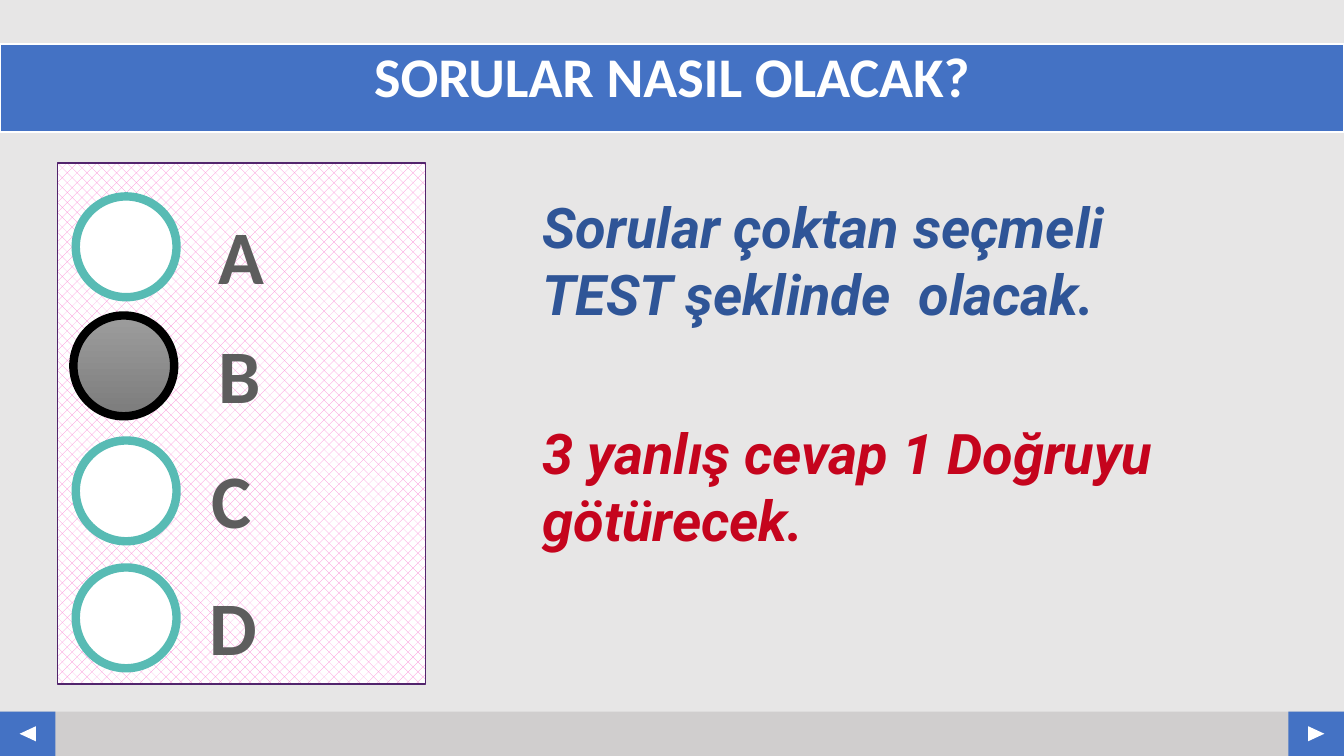
from pptx import Presentation
from pptx.dml.color import RGBColor
from pptx.enum.dml import MSO_PATTERN
from pptx.enum.shapes import MSO_SHAPE
from pptx.enum.text import MSO_ANCHOR, PP_ALIGN
from pptx.util import Cm, Pt

RECT, OVAL, TRIANGLE = MSO_SHAPE.RECTANGLE, MSO_SHAPE.OVAL, MSO_SHAPE.ISOSCELES_TRIANGLE
TOP, MIDDLE = MSO_ANCHOR.TOP, MSO_ANCHOR.MIDDLE
LEFT, CENTER = PP_ALIGN.LEFT, PP_ALIGN.CENTER

COLORS = {
    "background": "E7E6E6", "footer": "D0CECE", "blue": "4472C4", "white": "FFFFFF",
    "pink": "FB85D4", "purple": "52256D", "teal": "58BBB4", "black": "000000",
    "marked_top": "9D9D9D", "marked_bottom": "7C7C7C", "letter": "5D5D5D",
    "statement": "2F5597", "warning": "C5041D",
}
SLIDE_W, SLIDE_H = 33.87, 19.05
CIRCLE = 2.54

# letter, circle left, circle top, letter centre; measured from the answer panel
ANSWERS = [
    ("A", 0.46, 0.84, 4.63),
    ("B", 0.4, 3.84, 4.58),
    ("C", 0.46, 6.99, 4.38),
    ("D", 0.46, 10.19, 4.44),
]
MARKED = "B"


def rgb(name):
    return RGBColor.from_string(COLORS[name])


def add_figure(slide, kind, box, fill=None, line=None, line_width=1):
    figure = slide.shapes.add_shape(kind, *(Cm(length) for length in box))
    figure.shadow.inherit = False
    if fill:
        figure.fill.solid()
        figure.fill.fore_color.rgb = rgb(fill)
    if line:
        figure.line.color.rgb = rgb(line)
        figure.line.width = Pt(line_width)
    else:
        figure.line.fill.background()
    return figure


def write(figure, text, font_name, size, color, align=LEFT, anchor=TOP, italic=False):
    frame = figure.text_frame
    frame.word_wrap = True
    frame.vertical_anchor = anchor
    paragraph = frame.paragraphs[0]
    paragraph.text = text
    paragraph.alignment = align
    font = paragraph.font
    font.name, font.size, font.bold, font.italic = font_name, Pt(size), True, italic
    font.color.rgb = rgb(color)
    return frame


def add_text(slide, box, *args, **options):
    return write(slide.shapes.add_textbox(*(Cm(length) for length in box)), *args, **options)


def add_footer(slide, left, top, width, height):
    """Grey strip with a navigation button at each end."""
    button_w, arrow_w, arrow_h = 1.4, 0.38, 0.41
    add_figure(slide, RECT, (left, top, width, height), "footer")
    for button_left, rotation in ((left, 270), (left + width - button_w, 90)):
        add_figure(slide, RECT, (button_left, top, button_w, height), "blue")
        arrow = add_figure(slide, TRIANGLE, (button_left + (button_w - arrow_w) / 2,
                                             top + (height - arrow_h) / 2,
                                             arrow_w, arrow_h), "white")
        arrow.rotation = rotation


def add_title(slide, *box):
    bar = add_figure(slide, RECT, box, "blue", "white", 1.5)
    write(bar, "SORULAR NASIL OLACAK?", "Calibri", 40, "white", CENTER)
    bar.text_frame.paragraphs[0].line_spacing = 0.9


def add_answer_panel(slide, left, top, width, height):
    """Patterned answer sheet with one circle filled in."""
    sheet = add_figure(slide, RECT, (left, top, width, height), line="purple")
    sheet.fill.patterned()
    sheet.fill.pattern = MSO_PATTERN.PERCENT_30
    sheet.fill.fore_color.rgb = rgb("pink")
    sheet.fill.back_color.rgb = rgb("white")

    letter_w, letter_h = 1.8, 2.56
    for letter, circle_left, circle_top, letter_center in ANSWERS:
        marked = letter == MARKED
        circle = add_figure(slide, OVAL, (left + circle_left, top + circle_top, CIRCLE, CIRCLE),
                            "white", "black" if marked else "teal", 6)
        if marked:
            circle.fill.gradient()
            circle.fill.gradient_angle = 270
            for stop, shade in zip(circle.fill.gradient_stops, ("marked_top", "marked_bottom")):
                stop.color.rgb = rgb(shade)
        add_text(slide, (left + letter_center - letter_w / 2, top + circle_top + 0.2,
                         letter_w, letter_h), letter, "Calibri", 54, "letter", CENTER)


def add_rules(slide, left, top, width, height):
    """Two statements, one at the top and one at the bottom of the box."""
    rule_h = 3.76
    rules = (
        ("Sorular çoktan seçmeli TEST şeklinde  olacak.", "statement", top),
        ("3 yanlış cevap 1 Doğruyu götürecek.", "warning", top + height - rule_h),
    )
    for text, color, rule_top in rules:
        frame = add_text(slide, (left, rule_top, width, rule_h), text, "Roboto", 40, color,
                         anchor=MIDDLE, italic=True)
        frame.margin_left = frame.margin_right = Cm(0.33)
        frame.margin_top = frame.margin_bottom = Cm(0.18)


def main():
    deck = Presentation()
    deck.slide_width, deck.slide_height = Cm(SLIDE_W), Cm(SLIDE_H)
    slide = deck.slides.add_slide(deck.slide_layouts[6])
    slide.background.fill.solid()
    slide.background.fill.fore_color.rgb = rgb("background")

    add_footer(slide, 0, 17.93, SLIDE_W, 1.12)
    add_title(slide, 0, 1.12, SLIDE_W, 2.21)
    add_answer_panel(slide, 1.45, 4.11, 9.27, 13.13)
    add_rules(slide, 13.34, 4.67, 18.01, 9.45)
    deck.save("out.pptx")


if __name__ == "__main__":
    main()
